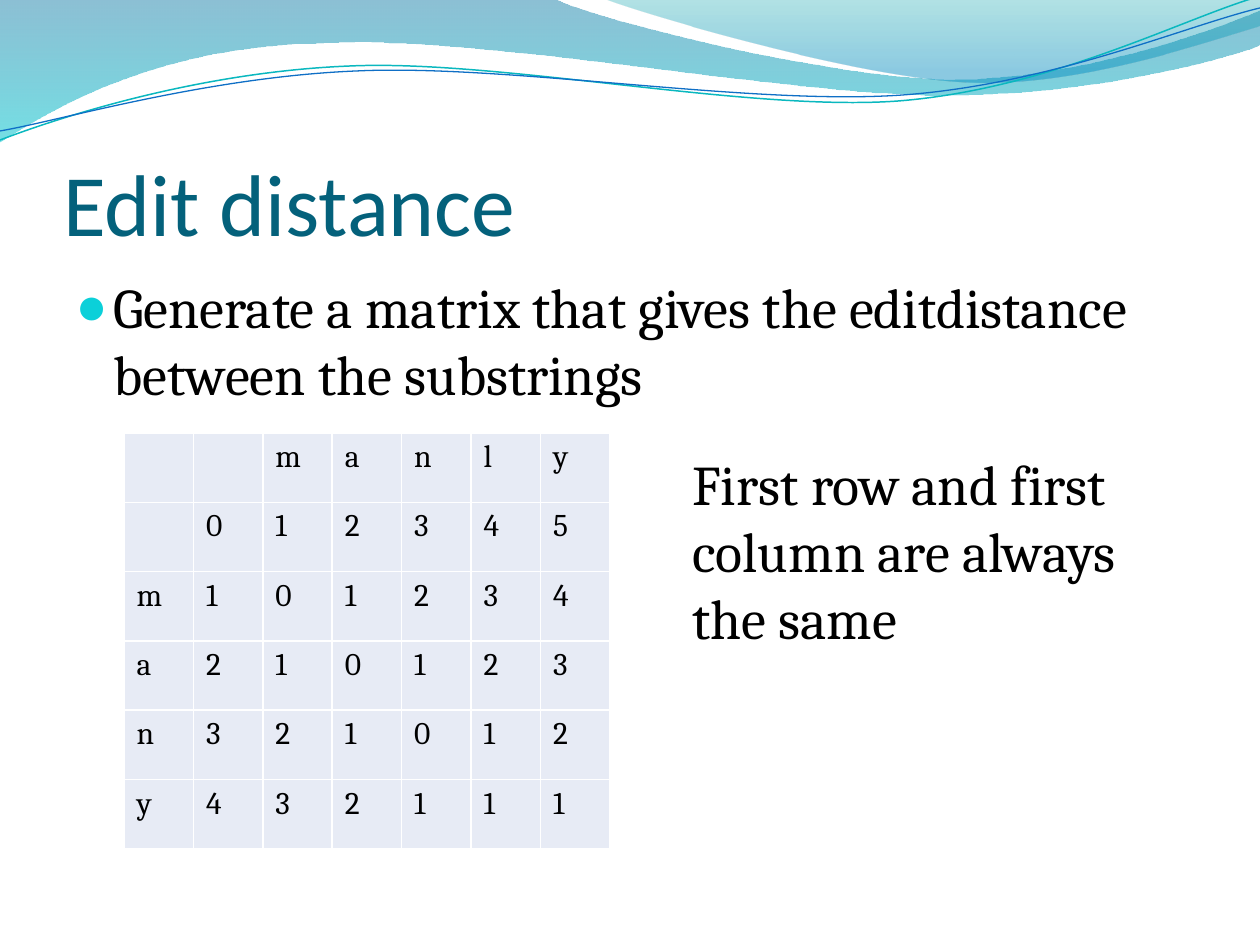
from lxml.etree import SubElement
from pptx import Presentation
from pptx.dml.color import RGBColor
from pptx.enum.text import MSO_ANCHOR, MSO_AUTO_SIZE, PP_ALIGN
from pptx.oxml.ns import qn
from pptx.util import Emu, Pt

COLORS = {
    "title": "04617B", "text": "000000", "bullet": "0BD0D9",
    "cell": "E7EBF5", "border": "FFFFFF",
    "wave top": "0074A1", "wave bottom": "00C6CF",
    "crest top": "00A1A9", "crest bottom": "008BBF",
    "teal line": "0AB8BF", "blue line": "0F6FC6",
}
RGB = {name: RGBColor.from_string(value) for name, value in COLORS.items()}


def px(value):
    return Emu(round(value * 914400 / 126))


def add_wave(shapes, start, segments, close):
    """Draw segments: one point is a straight line, three are a Bézier curve."""
    builder = shapes.build_freeform(px(start[0]), px(start[1]))
    builder.add_line_segments([(px(x), px(y)) for segment in segments for x, y in segment],
                              close=close)
    wave = builder.convert_to_shape()
    wave.shadow.inherit = False
    outline = next(wave._element.iter(qn("a:path")))
    steps = iter(outline.findall(qn("a:lnTo")))
    for segment in segments:
        first, *others = [next(steps) for _ in segment]
        if others:
            first.tag = qn("a:cubicBezTo")
        for step in others:
            first.append(step[0])
            outline.remove(step)
    return wave


prs = Presentation()
prs.slide_width, prs.slide_height = px(1260), px(945)
slide = prs.slides.add_slide(prs.slide_layouts[1])
shapes = slide.shapes

# Wave header: two gradient bands, then two thin lines
bands = [
    ((-1, -1), [
        [(554, -1)],
        [(600, 21), (837, 79), (955, 79)],
        [(1075, 79), (1207, 33), (1260, 11)],
        [(1261, 45)],
        [(1239, 55), (1096, 96), (940, 95)],
        [(784, 95), (481, 35), (324, 43)],
        [(163, 45), (58, 105), (-1, 142)],
    ], [("wave top", 0, 45), ("wave bottom", 1, 55)]),
    ((604, -1), [
        [(641, 14), (859, 78), (969, 82)],
        [(1079, 87), (1211, 40), (1260, 26)],
        [(1260, 0)],
    ], [("crest top", 0, 30), ("crest bottom", 0.8, 45)]),
]
header = []
for start, segments, stops in bands:
    band = add_wave(shapes, start, segments, close=True)
    band.line.fill.background()
    band.fill.gradient()
    band.fill.gradient_angle = 270
    for stop, (color, position, _) in zip(band.fill.gradient_stops, stops):
        stop.color.rgb = RGB[color]
        stop.position = position
    for srgb, (_, _, opacity) in zip(band._element.spPr.iter(qn("a:srgbClr")), stops):
        SubElement(srgb, qn("a:alpha"), val=str(opacity * 1000))
    header.append(band)

wave_lines = [
    ((0, 140), [
        [(60, 117), (199, 72), (349, 66)],
        [(498, 59), (747, 112), (898, 101)],
        [(1050, 89), (1182, 19), (1257, -3)],
    ], "teal line", 0.85),
    ((0, 131), [
        [(59, 121), (207, 77), (357, 71)],
        [(508, 64), (752, 106), (903, 95)],
        [(1053, 84), (1185, 26), (1260, 8)],
    ], "blue line", 0.75),
]
for start, segments, color, width in wave_lines:
    wave_line = add_wave(shapes, start, segments, close=False)
    wave_line.fill.background()
    wave_line.line.color.rgb = RGB[color]
    wave_line.line.width = Pt(width)
    header.append(wave_line)

# The header lies behind the text; the first two tree children are properties
for index, part in enumerate(header, start=2):
    shapes._spTree.insert(index, part._element)

# Title
title = shapes.title
title.left, title.top, title.width, title.height = px(63), px(97), px(1134), px(157)
title_frame = title.text_frame
title_frame.text = "Edit distance"
title_frame.auto_size = MSO_AUTO_SIZE.NONE
title_frame.vertical_anchor = MSO_ANCHOR.BOTTOM
title_frame.margin_left = title_frame.margin_right = title_frame.margin_bottom = 0
heading = title_frame.paragraphs[0]
heading.alignment = PP_ALIGN.LEFT
heading.font.name, heading.font.size = "Calibri", Pt(50)
heading.font.color.rgb = RGB["title"]

# Task
body = slide.placeholders[1]
body.left, body.top, body.width, body.height = px(63), px(266), px(1134), px(605)
body.text_frame.text = "Generate a matrix that gives the editdistance between the substrings"
body.text_frame.auto_size = MSO_AUTO_SIZE.NONE
task = body.text_frame.paragraphs[0]
task.space_before = Pt(6.4)
task_props = task._p.get_or_add_pPr()
task_props.set("marL", str(px(38)))
task_props.set("indent", str(px(-38)))
bullet_color = SubElement(task_props, qn("a:buClr"))
SubElement(bullet_color, qn("a:srgbClr"), val=COLORS["bullet"])
SubElement(task_props, qn("a:buSzPct"), val="95000")
SubElement(task_props, qn("a:buChar"), char="●")

# Distance matrix
matrix = [
    ["", "", *"manly"],
    ["", *"012345"],
    [*"m101234"],
    [*"a210123"],
    [*"n321012"],
    [*"y432111"],
]
table = shapes.add_table(len(matrix), len(matrix[0]),
                         px(124), px(433), px(486), px(416)).table
table.first_row = table.horz_banding = False
for column in table.columns:
    column.width = px(486 / 7)
for row, values in zip(table.rows, matrix):
    row.height = px(416 / 6)
    for cell, value in zip(row.cells, values):
        cell.text = value
        entry = cell.text_frame.paragraphs[0]
        entry.font.name, entry.font.size = "Cambria", Pt(18)
        entry.font.color.rgb = RGB["text"]
        cell_props = cell._tc.get_or_add_tcPr()
        for side in ("lnL", "lnR", "lnT", "lnB"):
            border = SubElement(cell_props, qn(f"a:{side}"), w=str(Pt(1)))
            border_fill = SubElement(border, qn("a:solidFill"))
            SubElement(border_fill, qn("a:srgbClr"), val=COLORS["border"])
        cell.fill.solid()
        cell.fill.fore_color.rgb = RGB["cell"]

# Remark beside the matrix
remark_frame = shapes.add_textbox(px(680), px(443), px(476), px(217)).text_frame
remark_frame.word_wrap = True
remark_frame.auto_size = MSO_AUTO_SIZE.SHAPE_TO_FIT_TEXT
remark_frame.text = "First row and first column are always the same"

for paragraph in (task, remark_frame.paragraphs[0]):
    paragraph.font.name, paragraph.font.size = "Cambria", Pt(32)
    paragraph.font.color.rgb = RGB["text"]

prs.save("out.pptx")
